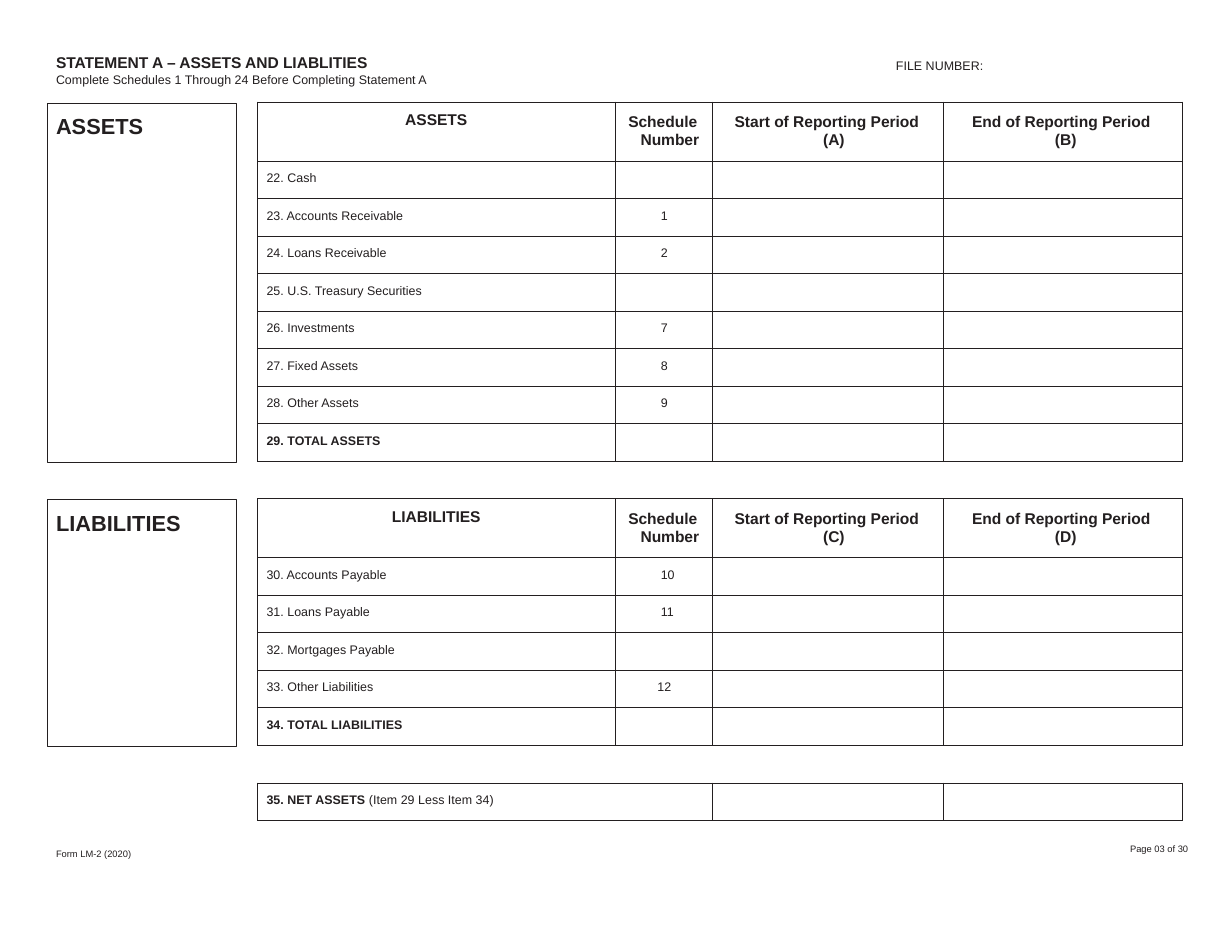
"""Build the assets and liabilities statement of a financial report form."""
from lxml import etree
from pptx import Presentation
from pptx.dml.color import RGBColor
from pptx.enum.shapes import MSO_SHAPE
from pptx.enum.text import MSO_ANCHOR, MSO_AUTO_SIZE, PP_ALIGN
from pptx.oxml.ns import qn
from pptx.util import Inches, Pt

RECTANGLE = MSO_SHAPE.RECTANGLE
TOP = MSO_ANCHOR.TOP
FIXED = MSO_AUTO_SIZE.NONE
LEFT, CENTER = PP_ALIGN.LEFT, PP_ALIGN.CENTER

INK = "231F20"
TITLE_LEFT, BAND_LEFT, TABLE_LEFT = 0.5, 0.42, 2.3
BAND_WIDTH = 1.69
ITEM, SCHEDULE, START, END = 3.19, 0.87, 2.06, 2.14
HEADER_ROW, ROW = 0.53, 0.335
INSET, HEADER_INSET = 0.09, 0.1


def write(frame, text, size, bold=False, align=LEFT, indent=0, first=0, spacing=None):
    """Fill the last paragraph of a frame in the form's typeface."""
    paragraph = frame.paragraphs[-1]
    paragraph.text = text
    paragraph.alignment = align
    paragraph.line_spacing = spacing
    paragraph.font.name = "Arial"
    paragraph.font.size = Pt(size)
    paragraph.font.bold = bold
    paragraph.font.color.rgb = RGBColor.from_string(INK)
    properties = paragraph._p.get_or_add_pPr()
    properties.set("marL", str(Inches(indent)))
    properties.set("indent", str(Inches(first)))
    return paragraph


def add_grid(top, widths, heights):
    """Add a plain ruled table and return its rows of cells."""
    table = slide.shapes.add_table(
        len(heights), len(widths), Inches(TABLE_LEFT), Inches(top),
        Inches(sum(widths)), Inches(sum(heights))).table
    table.first_row = table.horz_banding = False
    for column, width in zip(table.columns, widths):
        column.width = Inches(width)
    for row, height in zip(table.rows, heights):
        row.height = Inches(height)
    for cell in table.iter_cells():
        cell.margin_left = cell.margin_right = cell.margin_bottom = 0
        cell.margin_top = Inches(INSET)
        properties = cell._tc.get_or_add_tcPr()
        for side in ("lnL", "lnR", "lnT", "lnB"):
            border = etree.SubElement(properties, qn(f"a:{side}"), w=str(Pt(0.5)))
            solid = etree.SubElement(border, qn("a:solidFill"))
            etree.SubElement(solid, qn("a:srgbClr"), val=INK)
        cell.fill.background()
        write(cell.text_frame, "", 8)
    return [list(row.cells) for row in table.rows]


deck = Presentation()
deck.slide_width, deck.slide_height = Inches(11), Inches(8.5)
slide = deck.slides.add_slide(deck.slide_layouts[5])

title = slide.shapes.title
title.left, title.top = Inches(TITLE_LEFT), Inches(0.48)
title.width, title.height = Inches(3.34), Inches(0.31)
heading = title.text_frame
heading.margin_left = heading.margin_right = heading.margin_top = heading.margin_bottom = 0
heading.vertical_anchor = TOP
heading.auto_size = FIXED
write(heading, "STATEMENT A – ASSETS AND LIABLITIES", 10, True, spacing=Pt(11.8))
heading.add_paragraph().space_before = Pt(0)
write(heading, "Complete Schedules 1 Through 24 Before Completing Statement A", 8, spacing=Pt(9.4))

for left, top, width, label, size in (
    (8, 0.52, 1, "FILE NUMBER:", 8),
    (TITLE_LEFT, 7.57, 1.81, "Form LM-2 (2020)", 6),
    (10.09, 7.53, 0.6, "Page 03 of 30", 6),
):
    caption = slide.shapes.add_textbox(
        Inches(left), Inches(top), Inches(width), Inches(0.15)).text_frame
    caption.margin_left = caption.margin_right = caption.margin_top = caption.margin_bottom = 0
    caption.word_wrap = True
    write(caption, label, size)

sections = (
    (0.91, "ASSETS", "A", "B", (
        ("22. Cash", ""), ("23. Accounts Receivable", "1"), ("24. Loans Receivable", "2"),
        ("25. U.S. Treasury Securities", ""), ("26. Investments", "7"),
        ("27. Fixed Assets", "8"), ("28. Other Assets", "9"), ("29. TOTAL ASSETS", ""))),
    (4.45, "LIABILITIES", "C", "D", (
        ("30. Accounts Payable", "10"), ("31. Loans Payable", "11"),
        ("32. Mortgages Payable", ""), ("33. Other Liabilities", "12"),
        ("34. TOTAL LIABILITIES", ""))),
)
for top, section, start_letter, end_letter, items in sections:
    heights = [HEADER_ROW] + [ROW] * len(items)
    band = slide.shapes.add_shape(
        RECTANGLE, Inches(BAND_LEFT), Inches(top + 0.01), Inches(BAND_WIDTH), Inches(sum(heights)))
    band.shadow.inherit = False
    band.fill.background()
    band.line.color.rgb = RGBColor.from_string(INK)
    band.line.width = Pt(0.5)
    band_label = band.text_frame
    band_label.margin_left = band_label.margin_right = band_label.margin_bottom = 0
    band_label.margin_top = Inches(INSET)
    band_label.vertical_anchor = TOP
    write(band_label, section, 14, True, indent=0.08)

    header, *body = add_grid(top, (ITEM, SCHEDULE, START, END), heights)
    write(header[0].text_frame, section, 10, True, CENTER)
    for cell, label, indent, first in zip(
        header[1:],
        ("Schedule\vNumber", f"Start of Reporting Period\v({start_letter})",
         f"End of Reporting Period\v({end_letter})"),
        (0.23, 0.99, 1), (-0.11, -0.79, -0.74),
    ):
        cell.margin_top = Inches(HEADER_INSET)
        write(cell.text_frame, label, 10, True, indent=indent, first=first, spacing=Pt(11.5))
    for cells, (item, schedule) in zip(body, items):
        write(cells[0].text_frame, item, 8, "TOTAL" in item, indent=0.08)
        write(cells[1].text_frame, schedule, 8, indent=0.38 if schedule == "12" else 0.41)

net_row = add_grid(6.99, (ITEM + SCHEDULE, START, END), [ROW])[0]
net_assets = write(net_row[0].text_frame, "35. NET ASSETS ", 8, True, indent=0.08)
formula = net_assets.add_run()
formula.text = "(Item 29 Less Item 34)"
formula.font.bold = False

deck.save("out.pptx")
